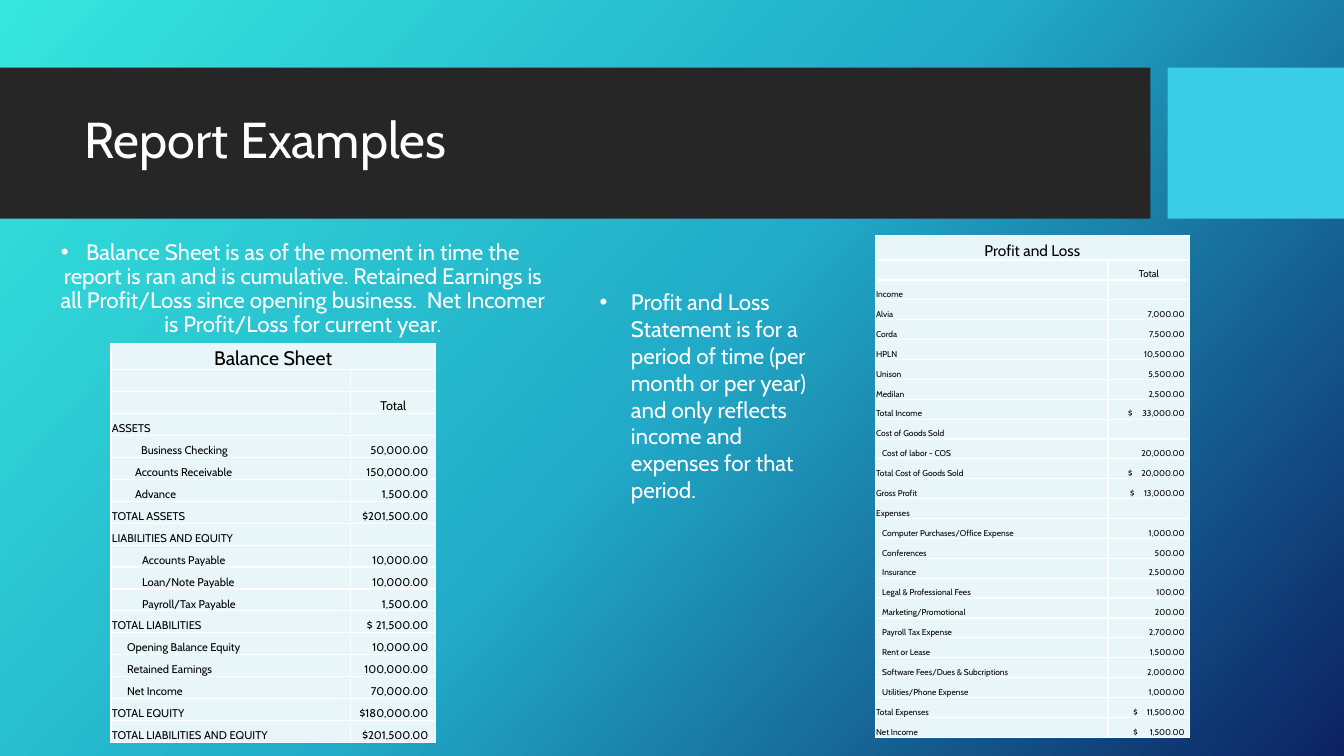
import pptx
import pptx.dml.color
import pptx.enum.shapes
import pptx.enum.text
import pptx.oxml.ns
import pptx.util
from lxml import etree

Inches = pptx.util.Inches
Pt = pptx.util.Pt
RGBColor = pptx.dml.color.RGBColor
Align = pptx.enum.text.PP_ALIGN
Anchor = pptx.enum.text.MSO_ANCHOR
qn = pptx.oxml.ns.qn

FONT = "Cabin"
WHITE = RGBColor(0xFF, 0xFF, 0xFF)
BLACK = RGBColor(0x00, 0x00, 0x00)
CHARCOAL = RGBColor(0x26, 0x26, 0x26)
CYAN = RGBColor(0x39, 0xCD, 0xE7)
CELL_TINT = RGBColor(0xE8, 0xF6, 0xFA)
BACKGROUND_STOPS = [
    (0, RGBColor(0x36, 0xE6, 0xDD)),
    (50, RGBColor(0x21, 0xAB, 0xC8)),
    (100, RGBColor(0x0C, 0x22, 0x63)),
]
BACKGROUND_ANGLE = 42

TITLE = "Report Examples"
BALANCE_NOTE = (
    "Balance Sheet is as of the moment in time the report is ran and is "
    "cumulative. Retained Earnings is all Profit/Loss since opening business.  "
    "Net Incomer is Profit/Loss for current year."
)
PROFIT_NOTE = (
    "Profit and Loss Statement is for a period of time (per month or per year) "
    "and only reflects income and expenses for that period."
)

# Rows: label, label indent, amount, and where a detached dollar sign starts
BALANCE_SHEET = {
    "title": "Balance Sheet",
    "place": (1.1, 3.41, 3.22, 3.96),
    "columns": (2.38, 0.84),
    "title_height": 0.26,
    "sizes": (14, 9, 8),
    "amount_inset": 0.07,
    "blank_rows": 1,
    "rows": [
        ("ASSETS", 0.01, ""),
        ("Business Checking", 0.3, "50,000.00"),
        ("Accounts Receivable", 0.24, "150,000.00"),
        ("Advance", 0.24, "1,500.00"),
        ("TOTAL ASSETS", 0.01, "$201,500.00"),
        ("LIABILITIES AND EQUITY", 0.01, ""),
        ("Accounts Payable", 0.31, "10,000.00"),
        ("Loan/Note Payable", 0.31, "10,000.00"),
        ("Payroll/Tax Payable", 0.31, "1,500.00"),
        ("TOTAL LIABILITIES", 0.01, "21,500.00", 0.16),
        ("Opening Balance Equity", 0.16, "10,000.00"),
        ("Retained Earnings", 0.16, "100,000.00"),
        ("Net Income", 0.16, "70,000.00"),
        ("TOTAL EQUITY", 0.01, "$180,000.00"),
        ("TOTAL LIABILITIES AND EQUITY", 0.01, "$201,500.00"),
    ],
}
PROFIT_AND_LOSS = {
    "title": "Profit and Loss",
    "place": (8.68, 2.34, 3.12, 4.98),
    "columns": (2.31, 0.81),
    "title_height": 0.24,
    "sizes": (11, 7, 6),
    "amount_inset": 0.05,
    "blank_rows": 0,
    "rows": [
        ("Income", 0.01, ""),
        ("Alvia", 0.01, "7,000.00"),
        ("Corda", 0.01, "7,500.00"),
        ("HPLN", 0.01, "10,500.00"),
        ("Unison", 0.01, "5,500.00"),
        ("Medilan", 0.01, "2,500.00"),
        ("Total Income", 0.01, "33,000.00", 0.2),
        ("Cost of Goods Sold", 0.01, ""),
        ("Cost of labor - COS", 0.07, "20,000.00"),
        ("Total Cost of Goods Sold", 0.01, "20,000.00", 0.2),
        ("Gross Profit", 0.01, "13,000.00", 0.22),
        ("Expenses", 0.01, ""),
        ("Computer Purchases/Office Expense", 0.07, "1,000.00"),
        ("Conferences", 0.07, "500.00"),
        ("Insurance", 0.07, "2,500.00"),
        ("Legal & Professional Fees", 0.07, "100.00"),
        ("Marketing/Promotional", 0.07, "200.00"),
        ("Payroll Tax Expense", 0.07, "2,700.00"),
        ("Rent or Lease", 0.07, "1,500.00"),
        ("Software Fees/Dues & Subcriptions", 0.07, "2,000.00"),
        ("Utilities/Phone Expense", 0.07, "1,000.00"),
        ("Total Expenses", 0.01, "11,500.00", 0.25),
        ("Net Income", 0.01, "1,500.00", 0.25),
    ],
}


def add_span(para, text, size, color):
    span = para.add_run()
    span.text = text
    span.font.name = FONT
    span.font.size = Pt(size)
    span.font.color.rgb = color


def paint_background(page):
    page.background.fill.gradient()
    gradient = next(page.element.iter(qn("a:gradFill")))
    stops = gradient.find(qn("a:gsLst"))
    for stop in list(stops):
        stops.remove(stop)
    for percent, color in BACKGROUND_STOPS:
        stop = etree.SubElement(stops, qn("a:gs"), pos=str(percent * 1000))
        etree.SubElement(stop, qn("a:srgbClr"), val=str(color))
    gradient.find(qn("a:lin")).set("ang", str(BACKGROUND_ANGLE * 60000))


def add_band(page, place, color):
    band = page.shapes.add_shape(
        pptx.enum.shapes.MSO_SHAPE.RECTANGLE, *map(Inches, place))
    band.shadow.inherit = False
    band.fill.solid()
    band.fill.fore_color.rgb = color
    band.line.fill.background()


def add_text(page, place, text, size, hang=0, align=Align.LEFT, spacing=None,
             anchor=Anchor.TOP):
    """Add a white text box; a hang above zero gives it a bullet."""
    box = page.shapes.add_textbox(*map(Inches, place))
    box.text_frame.word_wrap = True
    box.text_frame.vertical_anchor = anchor
    para = box.text_frame.paragraphs[0]
    if hang:
        properties = para._p.get_or_add_pPr()
        properties.set("marL", str(Inches(hang)))
        properties.set("indent", str(-Inches(hang)))
        etree.SubElement(properties, qn("a:buFont"), typeface="Arial")
        etree.SubElement(properties, qn("a:buChar"), char="•")
    para.alignment = align
    para.line_spacing = spacing
    add_span(para, text, size, WHITE)


def fill_cell(cell, text, size, align=Align.LEFT, left=0.01, right=0.01, tab=None):
    cell.fill.solid()
    cell.fill.fore_color.rgb = CELL_TINT
    cell.vertical_anchor = Anchor.BOTTOM
    cell.margin_left, cell.margin_right = Inches(left), Inches(right)
    cell.margin_top, cell.margin_bottom = Inches(0.01), 0
    properties = cell._tc.get_or_add_tcPr()
    for position, side in enumerate(("lnL", "lnR", "lnT", "lnB")):
        border = etree.Element(qn("a:" + side), w=str(Pt(1)))
        paint = etree.SubElement(border, qn("a:solidFill"))
        etree.SubElement(paint, qn("a:srgbClr"), val=str(WHITE))
        properties.insert(position, border)
    para = cell.text_frame.paragraphs[0]
    if tab:
        tabs = etree.SubElement(para._p.get_or_add_pPr(), qn("a:tabLst"))
        etree.SubElement(tabs, qn("a:tab"), pos=str(Inches(tab)), algn="r")
    para.alignment = align
    if text:
        add_span(para, text, size, BLACK)
    else:
        etree.SubElement(para._p, qn("a:endParaRPr"), sz=str(size * 100))


def add_report(page, report):
    title_size, heading_size, row_size = report["sizes"]
    first_row = 2 + report["blank_rows"]
    count = first_row + len(report["rows"])
    table = page.shapes.add_table(count, 2, *map(Inches, report["place"])).table
    table.first_row = table.horz_banding = False
    for column, width in zip(table.columns, report["columns"]):
        column.width = Inches(width)
    row_height = (report["place"][3] - report["title_height"]) / (count - 1)
    for number, row in enumerate(table.rows):
        row.height = Inches(row_height if number else report["title_height"])

    table.cell(0, 0).merge(table.cell(0, 1))
    fill_cell(table.cell(0, 0), report["title"], title_size, Align.CENTER)
    fill_cell(table.cell(0, 1), "", row_size)
    for number in range(1, first_row):
        heading = "Total" if number == first_row - 1 else ""
        fill_cell(table.cell(number, 0), "", row_size)
        fill_cell(table.cell(number, 1), heading, heading_size, Align.CENTER)

    inset = report["amount_inset"]
    for number, (label, indent, amount, *dollar) in enumerate(report["rows"], first_row):
        fill_cell(table.cell(number, 0), label, row_size, left=indent)
        cell = table.cell(number, 1)
        if dollar:
            tab = report["columns"][1] - inset - dollar[0]
            fill_cell(cell, "$\t" + amount, row_size, left=dollar[0], tab=tab)
        else:
            fill_cell(cell, amount, row_size, Align.RIGHT, right=inset)


def main():
    deck = pptx.Presentation()
    deck.slide_width, deck.slide_height = Inches(13.33), Inches(7.5)
    page = deck.slides.add_slide(deck.slide_layouts[6])
    paint_background(page)
    add_band(page, (0, 0.67, 11.41, 1.5), CHARCOAL)
    add_band(page, (11.58, 0.67, 1.75, 1.5), CYAN)
    add_text(page, (0.74, 0.82, 10.51, 1.18), TITLE, 36, spacing=0.9,
             anchor=Anchor.MIDDLE)
    add_report(page, BALANCE_SHEET)
    add_report(page, PROFIT_AND_LOSS)
    add_text(page, (0.2, 2.34, 5.36, 3.94), BALANCE_NOTE, 16, hang=0.25,
             align=Align.CENTER, spacing=0.9)
    add_text(page, (5.85, 2.81, 2.36, 2.26), PROFIT_NOTE, 16, hang=0.31)
    deck.save("out.pptx")


if __name__ == "__main__":
    main()
